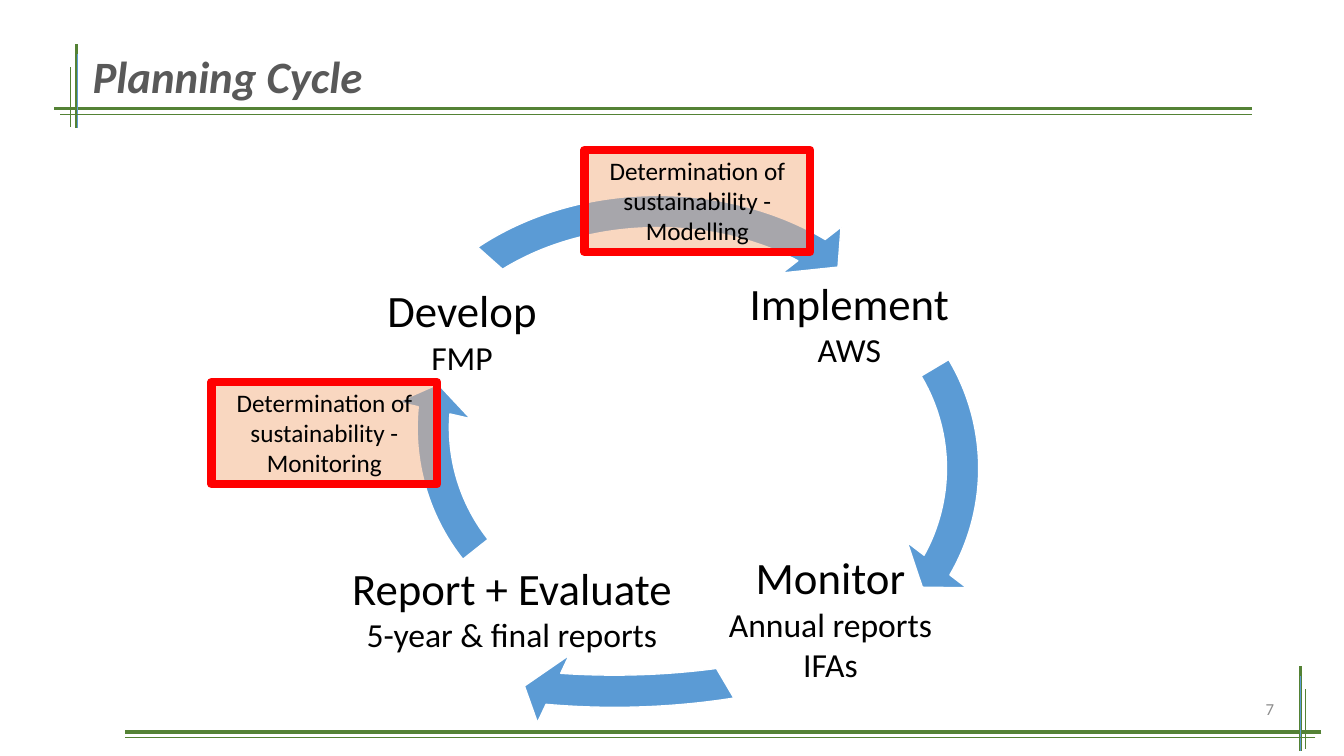
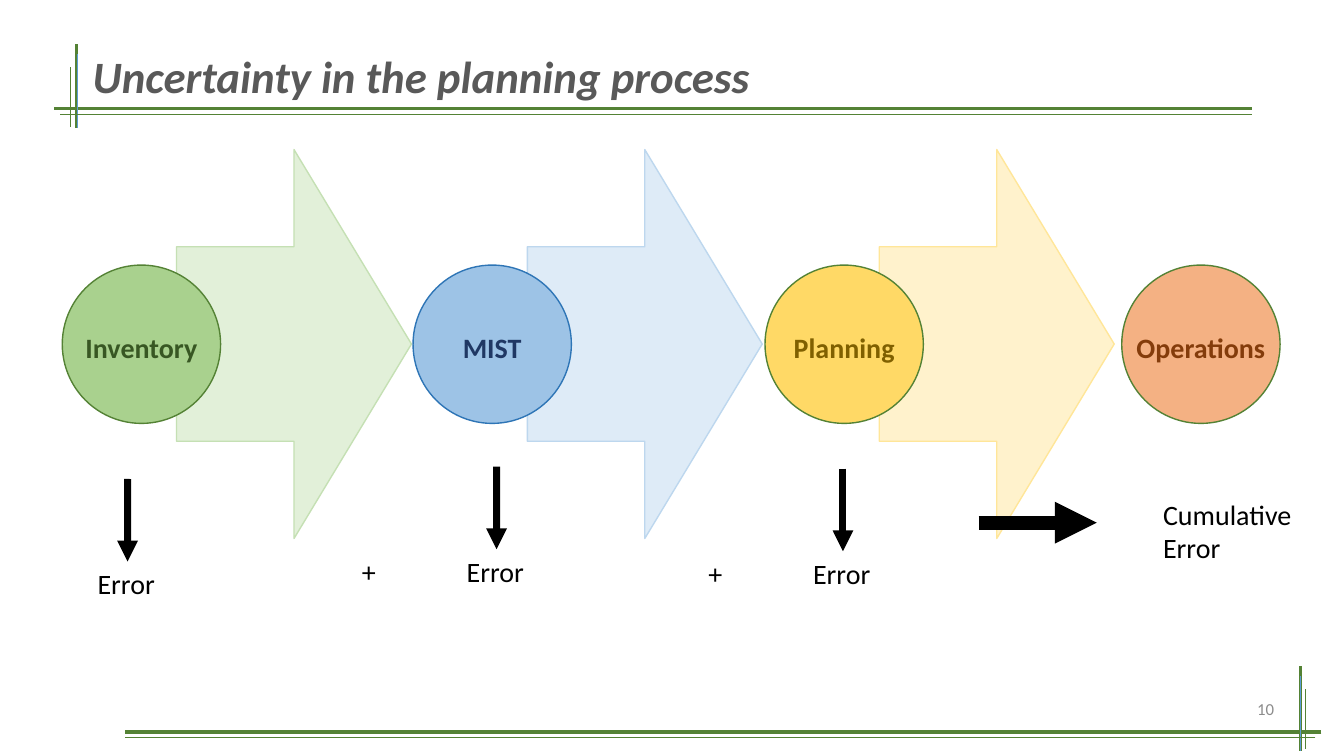
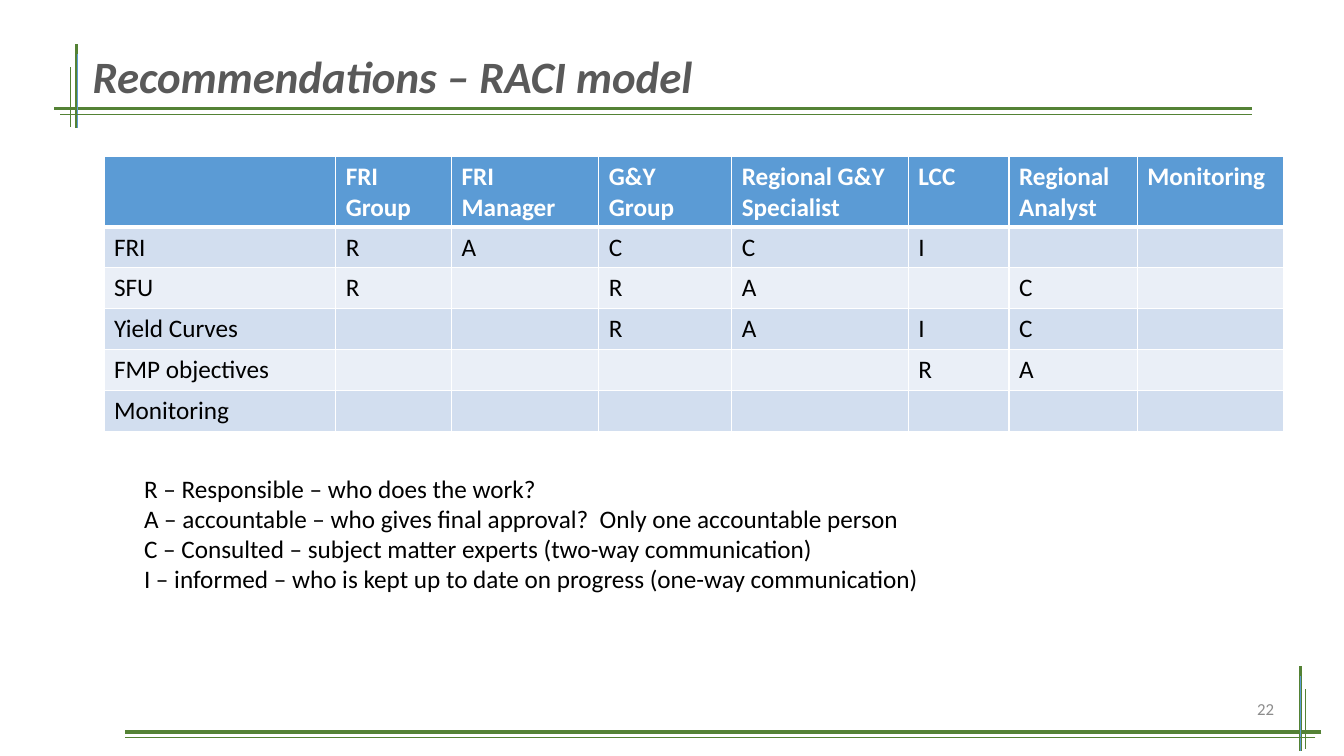
from dataclasses import dataclass
from typing import NamedTuple

from lxml.etree import SubElement
from pptx import Presentation
from pptx.dml.color import RGBColor
from pptx.enum.shapes import MSO_CONNECTOR, MSO_SHAPE
from pptx.enum.text import MSO_ANCHOR, MSO_AUTO_SIZE, PP_ALIGN
from pptx.oxml.ns import qn
from pptx.util import Cm, Pt


@dataclass(frozen=True)
class Theme:
    """Colours, font and type sizes of the deck."""
    font: str = "Calibri"
    green: str = "548235"
    blue: str = "5B9BD5"
    ink: str = "000000"
    white: str = "FFFFFF"
    title: str = "595959"
    page: str = "8C8C8C"
    red: str = "FF0000"
    peach: str = "F4B183"
    bands: tuple = ("D2DEEF", "EAEFF7")
    head: int = 32
    sub: int = 24
    label: int = 20
    body: int = 18
    small: int = 12


class Box(NamedTuple):
    """A region in centimetres."""
    x: float
    y: float
    w: float
    h: float

    def inner(self, x, y, w, h):
        """Return a region placed from this one's corner."""
        return Box(self.x + x, self.y + y, w, h)

    def size(self):
        """Return the four lengths for a new shape."""
        return [Cm(side) for side in self]


T = Theme()
LEFT, MID, RIGHT = PP_ALIGN.LEFT, PP_ALIGN.CENTER, PP_ALIGN.RIGHT

RULES = [
    (1.37, 2.74, 31.55, 2.74, T.green, 2.5),
    (1.93, 1.12, 1.93, 3.23, T.green, 2.5),
    (1.95, 1.37, 1.95, 3.23, T.blue, 0.5),
    (1.78, 1.7, 1.78, 3.2, T.green, 0.5),
    (1.52, 2.87, 31.55, 2.87, T.green, 0.5),
    (33.3, 18.44, 3.15, 18.44, T.green, 2.5),
    (32.77, 16.79, 32.77, 18.92, T.green, 2.5),
    (32.77, 17.04, 32.77, 18.92, T.blue, 0.5),
    (32.89, 17.37, 32.89, 18.87, T.green, 0.5),
    (33.15, 18.57, 3.15, 18.57, T.green, 0.5),
]

TURNS = [
    (Box(8.79, 2.14, 11.76, 11.76), (17.766, 197.514)),
    (Box(0, 2.82, 21.67, 11.76), (64.501, 35.697)),
    (Box(5.33, 1.12, 11.76, 11.76), (111.056, 85.007)),
    (Box(4.47, 0.61, 14.91, 11.76), (188.608, 133.02)),
]
STEPS = [
    (Box(12.88, 3.43, 7.75, 1.83), "Implement\nAWS"),
    (Box(12.29, 10.85, 7.98, 1.85), "Monitor\nAnnual reports\nIFAs"),
    (Box(3.53, 10.11, 9.45, 2.84), "Report + Evaluate\n5-year & final reports"),
    (Box(4.72, 3.18, 4.55, 2.72), "Develop\nFMP"),
]
NOTES = [(10.08, 0, "Modelling"), (0.68, 5.85, "Monitoring")]

STAGES = [
    (0, "Inventory", "A9D18E", T.green, "385723", ("E2F0D9", "C5E0B4")),
    (8.84, "MIST", "9DC3E6", "2E75B6", "203864", ("DEEBF7", "BDD7EE")),
    (17.71, "Planning", "FFD966", T.green, "806000", ("FFF2CC", "FFE699")),
    (26.7, "Operations", T.peach, T.green, "843C0B", None),
]
ERRORS = [(2.21, 12.07, False), (11.51, 11.76, True), (20.24, 11.81, True)]

WIDTHS = [5.84, 2.92, 3.71, 3.35, 4.45, 2.54, 3.23, 3.68]
ROLES = [
    ["", "FRI Group", "FRI Manager", "G&Y Group", "Regional G&Y Specialist",
     "LCC", "Regional Analyst", "Monitoring"],
    ["FRI", "R", "A", "C", "C", "I", "", ""],
    ["SFU", "R", "", "R", "A", "", "C", ""],
    ["Yield Curves", "", "", "R", "A", "I", "C", ""],
    ["FMP objectives", "", "", "", "", "R", "A", ""],
    ["Monitoring", "", "", "", "", "", "", ""],
]
KEY = "\n".join([
    "R – Responsible – who does the work?",
    "A – accountable – who gives final approval?  Only one accountable person",
    "C – Consulted – subject matter experts (two-way communication)",
    "I – informed – who is kept up to date on progress (one-way communication)",
])


def tint(name):
    """Turn a hex string into a colour."""
    return RGBColor.from_string(name)


def write(frame, text, size, color=T.ink, align=LEFT, bold=False,
          slant=False, rest=None):
    """Set text; paragraphs after the first take the size in rest."""
    frame.text = text
    for row, para in enumerate(frame.paragraphs):
        para.alignment = align
        for run in para.runs:
            font = run.font
            font.name, font.bold, font.italic = T.font, bold, slant
            font.size = Pt(rest if row and rest else size)
            font.color.rgb = tint(color)


def label(slide, box, text, size, anchor=MSO_ANCHOR.TOP, inset=None, **style):
    """Add a wrapped text box."""
    shape = slide.shapes.add_textbox(*box.size())
    frame = shape.text_frame
    frame.word_wrap = True
    frame.vertical_anchor = anchor
    if inset is not None:
        frame.margin_left = frame.margin_right = Cm(inset)
        frame.margin_top = frame.margin_bottom = Cm(inset)
    write(frame, text, size, **style)
    return shape


def solid(slide, kind, box, fill, edge, width=1):
    """Add a filled and outlined preset shape."""
    shape = slide.shapes.add_shape(kind, *box.size())
    shape.shadow.inherit = False
    shape.fill.solid()
    shape.fill.fore_color.rgb = tint(fill)
    shape.line.color.rgb = tint(edge)
    shape.line.width = Pt(width)
    return shape


def stroke(slide, x, y, end, low, color, width, arrow=False):
    """Add a straight line, with an arrowhead if asked."""
    line = slide.shapes.add_connector(
        MSO_CONNECTOR.STRAIGHT, Cm(x), Cm(y), Cm(end), Cm(low))
    line.line.color.rgb = tint(color)
    line.line.width = Pt(width)
    props = line.element.spPr
    if arrow:
        SubElement(props.find(qn("a:ln")), qn("a:tailEnd"), type="triangle")
    SubElement(props, qn("a:effectLst"))
    return line


def frame_up(slide):
    """Draw the green rules and move them to the layout."""
    tree = slide.slide_layout.shapes.element
    for count, rule in enumerate(RULES):
        line = stroke(slide, *rule).element
        line.nvCxnSpPr.cNvPr.id = 100 + count
        tree.append(line)


def start(deck, title, page):
    """Add a slide with its title and page number."""
    slide = deck.slides.add_slide(deck.slide_layouts[5])
    head = slide.shapes.title
    head.left, head.top, head.width, head.height = Box(2.08, 0.66, 29.51, 2.64).size()
    frame = head.text_frame
    frame.auto_size = MSO_AUTO_SIZE.NONE
    frame.vertical_anchor = MSO_ANCHOR.MIDDLE
    write(frame, title, T.head, T.title, bold=True, slant=True)
    frame.paragraphs[0].line_spacing = 0.9
    label(slide, Box(24.74, 17.35, 7.62, 1.02), str(page), T.small,
          MSO_ANCHOR.MIDDLE, color=T.page, align=RIGHT)
    return slide


def cycle(slide, box):
    """Draw the four steps, the arrows between them and the notes."""
    for (area, bend), (place, text) in zip(TURNS, STEPS):
        label(slide, box.inner(*place), text, T.head, MSO_ANCHOR.MIDDLE, 0.1,
              align=MID, rest=T.sub)
        turn = solid(slide, MSO_SHAPE.CIRCULAR_ARROW, box.inner(*area), T.blue, T.white)
        for index, value in enumerate((0.069, 4.652, *bend, 0.08)):
            turn.adjustments[index] = value
    for x, y, word in NOTES:
        note = solid(slide, MSO_SHAPE.RECTANGLE, box.inner(x, y, 5.69, 2.57),
                     T.peach, T.red, 6)
        shade = note.element.spPr.find(qn("a:solidFill"))[0]
        SubElement(shade, qn("a:alpha"), val="50000")
        note.text_frame.word_wrap = True
        note.text_frame.vertical_anchor = MSO_ANCHOR.TOP
        write(note.text_frame, f"Determination of sustainability - {word}",
              T.body, align=MID)


def flow(slide, box):
    """Draw the row of stages with a broad arrow after each but the last."""
    for x, name, fill, edge, ink, arrow in STAGES:
        if arrow:
            solid(slide, MSO_SHAPE.RIGHT_ARROW,
                  box.inner(x + 2.88, 0, 5.92, box.h), *arrow)
        disc = solid(slide, MSO_SHAPE.OVAL, box.inner(x, 2.91, 3.99, 3.99), fill, edge)
        frame = disc.text_frame
        frame.word_wrap = False
        frame.vertical_anchor = MSO_ANCHOR.MIDDLE
        frame.margin_left = frame.margin_right = frame.margin_bottom = 0
        frame.margin_top = Cm(0.18)
        write(frame, name, T.label, ink, MID, bold=True)


def error(slide, box, plus):
    """Draw one arrow down to an error, after a plus sign if asked."""
    drop = box.h - 1.12
    word = label(slide, box.inner(0, drop, box.w, 1.12), "Error", T.label)
    mid = box.x + box.w / 2
    line = stroke(slide, mid, box.y, mid, box.y + drop, T.ink, 5, True)
    line.end_connect(word, 0)
    if plus:
        label(slide, box.inner(-2.64, drop, box.w, 1.12), "+", T.label)


def total(slide, box):
    """Draw the heavy arrow to the sum of errors."""
    y = box.y + 0.77
    stroke(slide, box.x, y, box.x + 2.98, y, T.ink, 10, True)
    label(slide, box.inner(4.4, 0, box.w - 4.4, box.h), "Cumulative Error", T.label)


def border(cell, low):
    """Give a cell white sides, the bottom one low points wide."""
    props = cell._tc.get_or_add_tcPr()
    sides = [("L", 1), ("R", 1), ("T", 1), ("B", low)]
    for index, (side, width) in enumerate(sides):
        line = SubElement(props, qn(f"a:ln{side}"), w=str(int(Pt(width))))
        fill = SubElement(line, qn("a:solidFill"))
        SubElement(fill, qn("a:srgbClr"), val=T.white)
        props.insert(index, line)


def grid(slide, box):
    """Add the table of roles."""
    table = slide.shapes.add_table(len(ROLES), len(WIDTHS), *box.size()).table
    for col, width in zip(table.columns, WIDTHS):
        col.width = Cm(width)
    for r, row in enumerate(ROLES):
        top = r == 0
        table.rows[r].height = Cm(1.78 if top else 1.03)
        for c, text in enumerate(row):
            cell = table.cell(r, c)
            cell.fill.solid()
            cell.fill.fore_color.rgb = tint(T.blue if top else T.bands[(r - 1) % 2])
            border(cell, 3 if top else 1)
            write(cell.text_frame, text, T.body, T.white if top else T.ink, bold=top)


def main():
    """Build the three slides."""
    deck = Presentation()
    deck.slide_width, deck.slide_height = Cm(33.87), Cm(19.05)

    slide = start(deck, "Planning Cycle", 7)
    frame_up(slide)
    cycle(slide, Box(4.65, 3.78, 21.67, 14.58))

    slide = start(deck, "Uncertainty in the planning process", 10)
    flow(slide, Box(1.57, 3.77, 30.69, 9.8))
    for x, y, plus in ERRORS:
        error(slide, Box(x, y, 2.01, 3.2), plus)
    total(slide, Box(24.66, 12.4, 8.59, 1.96))

    slide = start(deck, "Recommendations – RACI model", 22)
    grid(slide, Box(2.62, 3.94, 29.72, 6.93))
    label(slide, Box(3.38, 11.79, 20.07, 3.33), KEY, T.body)

    deck.save("out.pptx")


if __name__ == "__main__":
    main()
